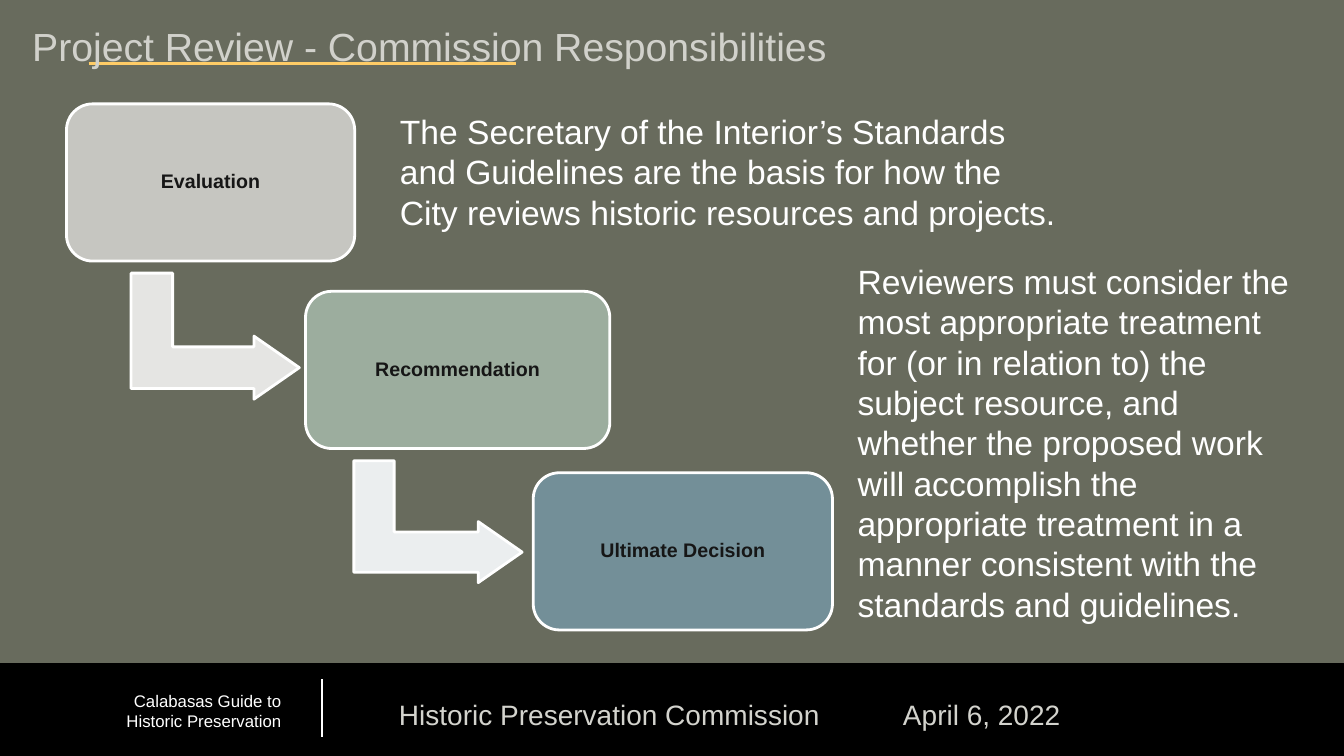
from dataclasses import dataclass

from pptx import Presentation
from pptx.dml.color import RGBColor
from pptx.enum.shapes import MSO_CONNECTOR, MSO_SHAPE
from pptx.enum.text import MSO_ANCHOR, MSO_AUTO_SIZE, PP_ALIGN
from pptx.oxml.xmlchemy import OxmlElement
from pptx.util import Pt

FONT = "Arial"
WHITE, BLACK = "FFFFFF", "000000"
STEP_HEIGHT = 112.3
ARROW_HEIGHT = 120.2


@dataclass
class Step:
    label: str
    left: float
    top: float
    width: float
    fill: str


@dataclass
class BentArrow:
    left: float
    top: float
    width: float
    fill: str


@dataclass
class Note:
    text: str
    left: float
    top: float
    width: float
    height: float
    size: float = 24
    color: str = WHITE
    align: PP_ALIGN = PP_ALIGN.LEFT
    tab: float = 0


@dataclass
class Rule:
    x1: float
    y1: float
    x2: float
    y2: float
    color: str


STEPS = [
    Step("Evaluation", 47.5, 74.2, 205.9, "C6C6C1"),
    Step("Recommendation", 218.2, 208.1, 217.4, "9CAD9E"),
    Step("Ultimate Decision", 380.9, 337.7, 213.8, "738F98"),
]
ARROWS = [
    BentArrow(108.7, 180, 90, "E5E5E3"),
    BentArrow(269.3, 312.5, 87.1, "EBEEEF"),
]
RULES = [
    Rule(229.7, 485.3, 229.7, 526.3, WHITE),
    Rule(63.4, 45.4, 368.6, 45.4, "FFCC66"),
]
FOOTER_NOTES = [
    Note("Calabasas Guide to Historic Preservation", 53.3, 489.6, 154.8, 37.4,
         size=12, align=PP_ALIGN.RIGHT),
    Note("Historic Preservation Commission\tApril 6, 2022", 277.9, 494.6, 522, 31.7,
         size=20, color="D3D3CD", tab=360),
]
BODY_NOTES = [
    Note("The Secretary of the Interior’s Standards and Guidelines are the basis "
         "for how the City reviews historic resources and projects.",
         278.6, 75.6, 490.3, 94.3),
    Note("Reviewers must consider the most appropriate treatment for (or in "
         "relation to) the subject resource, and whether the proposed work will "
         "accomplish the appropriate treatment in a manner consistent with the "
         "standards and guidelines.", 605.5, 182.9, 324, 269.3),
]


def rgb(color: str) -> RGBColor:
    return RGBColor.from_string(color)


def add_run(para, text: str, size: float, color: str, bold: bool = False) -> None:
    span = para.add_run()
    span.text = text
    span.font.name = FONT
    span.font.size = Pt(size)
    span.font.bold = bold
    span.font.color.rgb = rgb(color)


def add_block(page, kind, left: float, top: float, width: float, height: float,
              fill: str, line: str, weight: float):
    block = page.shapes.add_shape(kind, Pt(left), Pt(top), Pt(width), Pt(height))
    block.shadow.inherit = False
    block.fill.solid()
    block.fill.fore_color.rgb = rgb(fill)
    block.line.color.rgb = rgb(line)
    block.line.width = Pt(weight)
    return block


def add_note(page, note: Note) -> None:
    box = page.shapes.add_textbox(Pt(note.left), Pt(note.top),
                                  Pt(note.width), Pt(note.height))
    frame = box.text_frame
    frame.word_wrap = True
    frame.auto_size = MSO_AUTO_SIZE.SHAPE_TO_FIT_TEXT
    para = frame.paragraphs[0]
    para.alignment = note.align
    if note.tab:
        stops = OxmlElement("a:tabLst")
        stop = OxmlElement("a:tab")
        stop.set("pos", str(Pt(note.tab)))
        stop.set("algn", "l")
        stops.append(stop)
        para._p.get_or_add_pPr().append(stops)
    add_run(para, note.text, note.size, note.color)


def add_rule(page, rule: Rule) -> None:
    line = page.shapes.add_connector(MSO_CONNECTOR.STRAIGHT, Pt(rule.x1), Pt(rule.y1),
                                     Pt(rule.x2), Pt(rule.y2))
    line.line.color.rgb = rgb(rule.color)
    line.line.width = Pt(1.5)
    line._element.spPr.append(OxmlElement("a:effectLst"))


def add_arrow(page, arrow: BentArrow) -> None:
    block = add_block(page, MSO_SHAPE.BENT_UP_ARROW, arrow.left, arrow.top,
                      arrow.width, ARROW_HEIGHT, arrow.fill, WHITE, 2)
    block.rotation = 90
    for index, value in enumerate((0.33, 0.25, 0.36)):
        block.adjustments[index] = value


def add_step(page, step: Step) -> None:
    block = add_block(page, MSO_SHAPE.ROUNDED_RECTANGLE, step.left, step.top,
                      step.width, STEP_HEIGHT, step.fill, WHITE, 2)
    frame = block.text_frame
    frame.word_wrap = True
    frame.vertical_anchor = MSO_ANCHOR.MIDDLE
    para = frame.paragraphs[0]
    para.alignment = PP_ALIGN.CENTER
    para.line_spacing = 0.9
    add_run(para, step.label, 14, "161616", bold=True)


def set_title(page, text: str) -> None:
    title = page.shapes.title
    title.left, title.top, title.width, title.height = (
        Pt(15.8), Pt(10.8), Pt(928.1), Pt(44.6))
    frame = title.text_frame
    frame.word_wrap = True
    frame.auto_size = MSO_AUTO_SIZE.NONE
    frame.vertical_anchor = MSO_ANCHOR.MIDDLE
    para = frame.paragraphs[0]
    para.alignment = PP_ALIGN.LEFT
    add_run(para, text, 28, "D1D1CB")
    # Bring the title in front of its underline
    page.shapes.element.append(title.element)


def main() -> None:
    deck = Presentation()
    deck.slide_width, deck.slide_height = Pt(960), Pt(540)
    page = deck.slides.add_slide(deck.slide_layouts[5])
    page.background.fill.solid()
    page.background.fill.fore_color.rgb = rgb("686B5D")

    # Footer band, rules and title
    add_block(page, MSO_SHAPE.RECTANGLE, 0, 473.8, 960, 66.2, BLACK, BLACK, 0.75)
    for note in FOOTER_NOTES:
        add_note(page, note)
    for rule in RULES:
        add_rule(page, rule)
    set_title(page, "Project Review - Commission Responsibilities")

    # Review steps
    for arrow in ARROWS:
        add_arrow(page, arrow)
    for step in STEPS:
        add_step(page, step)

    # Explanations
    for note in BODY_NOTES:
        add_note(page, note)

    deck.save("out.pptx")


if __name__ == "__main__":
    main()
